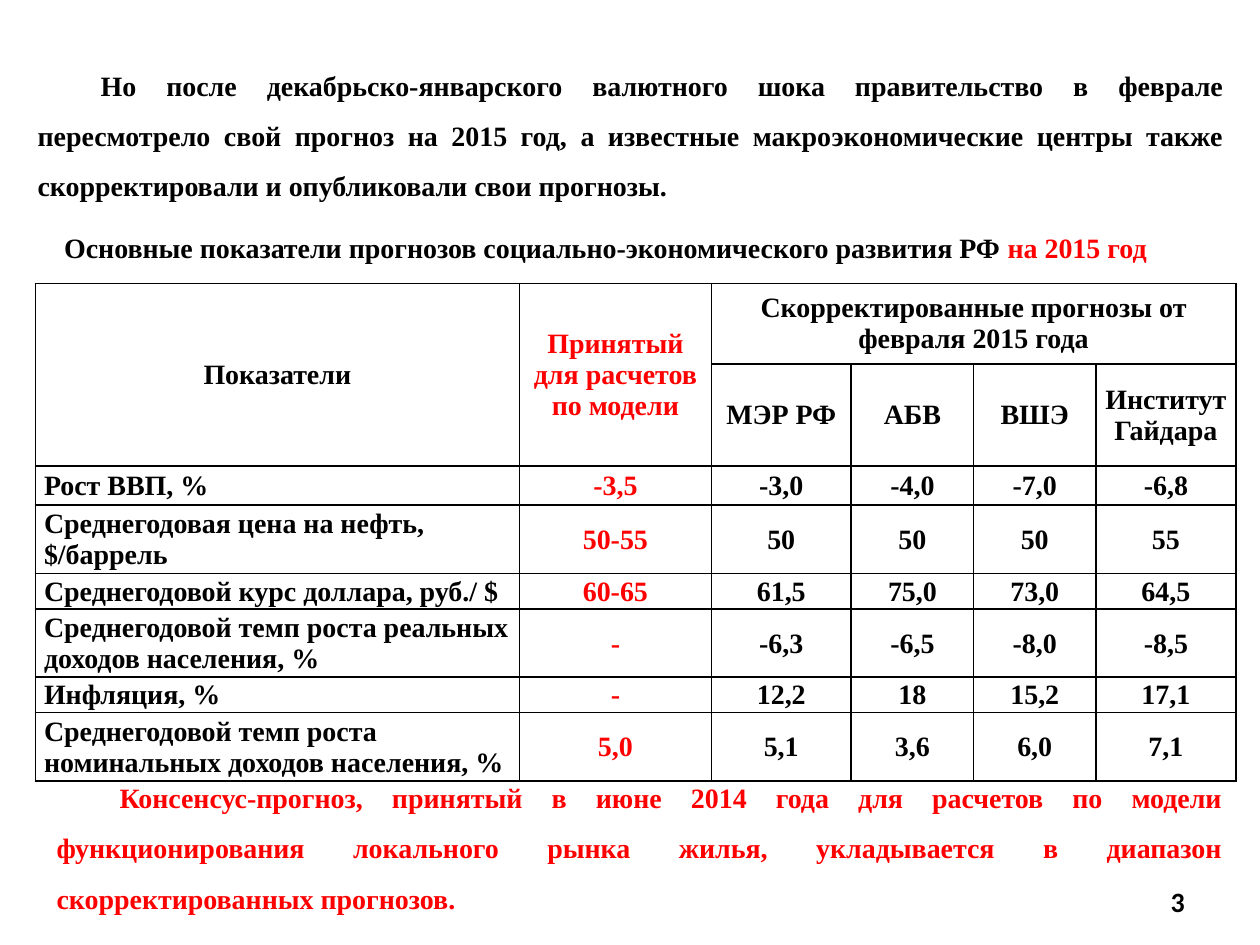
"""Build a slide comparing the economic forecasts for 2015."""
import pptx
import pptx.dml.color
import pptx.enum.text
import pptx.oxml
import pptx.oxml.ns
import pptx.util

BLACK = pptx.dml.color.RGBColor(0, 0, 0)
RED = pptx.dml.color.RGBColor(255, 0, 0)
ALIGN = pptx.enum.text.PP_ALIGN
MIDDLE = pptx.enum.text.MSO_ANCHOR.MIDDLE
TOP = pptx.enum.text.MSO_ANCHOR.TOP
SERIF = "Times New Roman"
WIDTH, HEIGHT = pptx.util.Inches(10), pptx.util.Inches(7.5)

INTRO = ("Но после декабрьско-январского валютного шока правительство в феврале "
         "пересмотрело свой прогноз на 2015 год, а известные макроэкономические центры "
         "также скорректировали и опубликовали свои прогнозы.")
CONSENSUS = ("Консенсус-прогноз, принятый в июне 2014 года для расчетов по модели "
             "функционирования локального рынка жилья, укладывается в диапазон "
             "скорректированных прогнозов.")
TITLE = [("Основные показатели прогнозов социально-экономического развития РФ ", BLACK),
         ("на 2015 год", RED)]
HEADS = [["Показатели", "Принятый для расчетов по модели",
          "Скорректированные прогнозы от февраля 2015 года", "", "", ""],
         ["", "", "МЭР РФ", "АБВ", "ВШЭ", "Институт Гайдара"]]
FORECASTS = [
    ["Рост ВВП, %", "-3,5", "-3,0", "-4,0", "-7,0", "-6,8"],
    ["Среднегодовая цена на нефть, $/баррель", "50-55", "50", "50", "50", "55"],
    ["Среднегодовой курс доллара, руб./ $", "60-65", "61,5", "75,0", "73,0", "64,5"],
    ["Среднегодовой темп роста реальных доходов населения, %",
     "-", "-6,3", "-6,5", "-8,0", "-8,5"],
    ["Инфляция, %", "-", "12,2", "18", "15,2", "17,1"],
    ["Среднегодовой темп роста номинальных доходов населения, %",
     "5,0", "5,1", "3,6", "6,0", "7,1"],
]
COLUMNS = [3.84, 1.52, 1.11, 0.97, 0.97, 1.11]
ROWS = [0.64, 0.81, 0.31, 0.54, 0.28, 0.54, 0.28, 0.54]


def share(x, y, w, h):
    """Turn percentages of the slide into a box."""
    return (int(WIDTH * x / 100), int(HEIGHT * y / 100),
            int(WIDTH * w / 100), int(HEIGHT * h / 100))


def style(r, color, font=SERIF):
    """Format a run in the slide's bold text style."""
    r.font.name, r.font.size, r.font.bold = font, pptx.util.Pt(16), True
    r.font.color.rgb = color


def add_text(s, box, runs, align, anchor=MIDDLE, font=SERIF, wrap=True):
    """Place one paragraph of coloured runs and return it."""
    tf = s.shapes.add_textbox(*box).text_frame
    tf.word_wrap, tf.vertical_anchor = wrap, anchor
    p = tf.paragraphs[0]
    p.alignment = align
    for text, color in runs:
        r = p.add_run()
        r.text = text
        style(r, color, font)
    return p


def add_comment(s, box, text, color, anchor):
    """Place a justified paragraph with a first-line indent."""
    p = add_text(s, box, [(text, color)], ALIGN.JUSTIFY, anchor)
    p.line_spacing = 1.5
    pPr = p._p.get_or_add_pPr()
    pPr.set("marL", "0")
    pPr.set("indent", str(pptx.util.Inches(0.5)))


def add_borders(cell):
    """Draw a thin black line on each side of a cell."""
    tcPr = cell._tc.get_or_add_tcPr()
    for i, side in enumerate(["lnL", "lnR", "lnT", "lnB"]):
        tcPr.insert(i, pptx.oxml.parse_xml(
            f'<a:{side} {pptx.oxml.ns.nsdecls("a")} w="{pptx.util.Pt(1)}"><a:solidFill>'
            f'<a:srgbClr val="{BLACK}"/></a:solidFill></a:{side}>'))


def fill_cell(cell, text, color, align, padded):
    """Write and format one table cell."""
    side = pptx.util.Inches(0.07 if padded else 0)
    cell.margin_left = cell.margin_right = side
    cell.margin_top = pptx.util.Inches(0.01 if padded else 0)
    cell.margin_bottom = 0
    cell.vertical_anchor = MIDDLE
    cell.fill.background()
    add_borders(cell)
    p = cell.text_frame.paragraphs[0]
    p.text, p.alignment = text, align
    p.font.size = pptx.util.Pt(16)
    for r in p.runs:
        style(r, color)


def add_forecasts(s, box):
    """Place the forecast table, sharing the box among columns and rows."""
    x, y, w, h = box
    table = s.shapes.add_table(len(ROWS), len(COLUMNS), x, y, w, h).table
    table.first_row = table.horz_banding = False
    for column, part in zip(table.columns, COLUMNS):
        column.width = int(w * part / sum(COLUMNS))
    for row, part in zip(table.rows, ROWS):
        row.height = int(h * part / sum(ROWS))
    for i, texts in enumerate(HEADS + FORECASTS):
        for j, text in enumerate(texts):
            body = i >= len(HEADS)
            fill_cell(table.cell(i, j), text, RED if j == 1 else BLACK,
                      ALIGN.LEFT if body and j == 0 else ALIGN.CENTER, body or j == 1)
    for first, last in [((0, 0), (1, 0)), ((0, 1), (1, 1)), ((0, 2), (0, 5))]:
        table.cell(*first).merge(table.cell(*last))


def main():
    """Assemble and save the slide."""
    prs = pptx.Presentation()
    prs.slide_width, prs.slide_height = WIDTH, HEIGHT
    s = prs.slides.add_slide(prs.slide_layouts[6])
    add_text(s, share(3.5, 23.7, 89.1, 4.9), TITLE, ALIGN.CENTER, wrap=False)
    add_forecasts(s, share(2.8, 30, 95.3, 52.5))
    add_comment(s, share(3.5, 80.4, 94.5, 16.8), CONSENSUS, RED, MIDDLE)
    add_comment(s, share(2, 4.8, 96.1, 16.8), INTRO, BLACK, TOP)
    add_text(s, share(90.2, 92.7, 4.8, 5.3), [("3", BLACK)], ALIGN.RIGHT, font="Calibri")
    prs.save("out.pptx")


if __name__ == "__main__":
    main()
